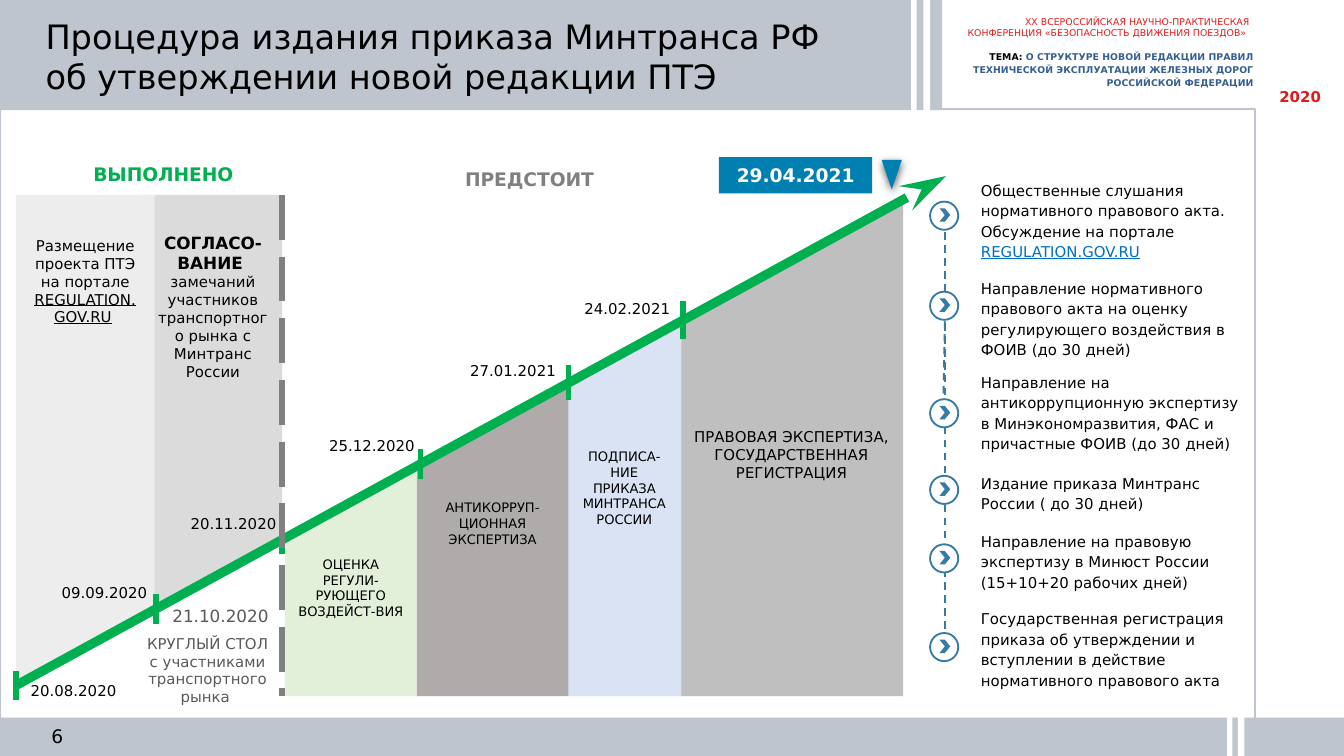
from lxml.etree import SubElement
from pptx import Presentation
from pptx.dml.color import RGBColor
from pptx.enum.dml import MSO_LINE
from pptx.enum.shapes import MSO_CONNECTOR, MSO_SHAPE
from pptx.enum.text import MSO_ANCHOR, PP_ALIGN
from pptx.oxml.ns import qn
from pptx.util import Inches, Pt

FONT = "DejaVu Sans"
HUE = {
    "black": "000000", "white": "FFFFFF", "frame": "BFC5CE", "red": "E21A1A",
    "navy": "365F91", "link": "0070C0", "steel": "377AA3", "blue": "007FB1",
    "green": "00B050", "gray": "808080", "dark": "595959", "mist": "EDEDED",
    "cloud": "DBDBDB", "lime": "E2F0D9", "taupe": "AFABAB", "sky": "DAE3F3",
    "stone": "BFBFBF",
}
LEFT, RIGHT, MID = PP_ALIGN.LEFT, PP_ALIGN.RIGHT, PP_ALIGN.CENTER

# Content: a paragraph is a string or a list of (text, style) runs
TITLE = "Процедура издания приказа Минтранса РФ об утверждении новой редакции ПТЭ"
EVENT = "XX ВСЕРОССИЙСКАЯ НАУЧНО-ПРАКТИЧЕСКАЯ КОНФЕРЕНЦИЯ «БЕЗОПАСНОСТЬ ДВИЖЕНИЯ ПОЕЗДОВ» "
THEME = [("ТЕМА: ", {"bold": True}),
         ("О СТРУКТУРЕ НОВОЙ РЕДАКЦИИ ПРАВИЛ ТЕХНИЧЕСКОЙ ЭКСПЛУАТАЦИИ ЖЕЛЕЗНЫХ ДОРОГ "
          "РОССИЙСКОЙ ФЕДЕРАЦИИ", {"bold": True, "hue": "navy"})]

# Finished stages, above the arrow: left, right, fill, text top, paragraphs
DONE = [
    (1.07, 2.1, "cloud", 1.73, [
        [("СОГЛАСО-ВАНИЕ ", {"bold": True, "size": 9})],
        "замечаний участников транспортного рынка с Минтранс России"]),
    (0.12, 1.15, "mist", 1.76, [
        [("Размещение проекта ПТЭ на портале ", {}), ("REGULATION.", {"under": True})],
        [("GOV.RU", {"under": True}), (" ", {})]]),
]
# Stages to come, below the arrow: the same and text size
AHEAD = [
    (5.06, 6.72, "stone", 3.18, ["ПРАВОВАЯ ЭКСПЕРТИЗА,", "ГОСУДАРСТВЕННАЯ РЕГИСТРАЦИЯ"], 8),
    (4.22, 5.07, "sky", 3.34, ["ПОДПИСА-НИЕ ПРИКАЗА МИНТРАНСА РОССИИ"], 7),
    (3.1, 4.23, "taupe", 3.72, ["АНТИКОРРУП-ЦИОННАЯ ЭКСПЕРТИЗА"], 7),
    (2.12, 3.1, "lime", 4.14, ["ОЦЕНКА РЕГУЛИ-РУЮЩЕГО ВОЗДЕЙСТ-ВИЯ"], 7),
]
# Milestones: tick x, half height, date, label left and top
DATES = [
    (0.12, 0.11, "20.08.2020", 0.13, 5.02),
    (1.16, 0.11, "09.09.2020", 0.36, 4.29),
    (2.1, 0.11, "20.11.2020", 1.32, 3.78),
    (3.13, 0.11, "25.12.2020", 2.35, 3.2),
    (4.23, 0.13, "27.01.2021", 3.4, 2.64),
    (5.08, 0.14, "24.02.2021", 4.25, 2.18),
]
ROUND = ["КРУГЛЫЙ СТОЛ", "с участниками", "транспортного", "рынка "]
# Steps: text top, width, height, circle top, paragraph
STEPS = [
    (1.28, 2.1, 0.67, 1.5, [
        ("Общественные слушания нормативного правового акта. Обсуждение на портале ", {}),
        ("REGULATION.GOV.RU", {"hue": "link", "under": True})]),
    (2.01, 2.1, 0.7, 2.17, "Направление нормативного правового акта на оценку "
     "регулирующего воздействия в ФОИВ (до 30 дней)"),
    (2.71, 2.46, 0.72, 2.97, "Направление на \nантикоррупционную экспертизу \n"
     "в Минэкономразвития, ФАС и причастные ФОИВ (до 30 дней)"),
    (3.46, 2.15, 0.41, 3.54, "Издание приказа Минтранс России ( до 30 дней)"),
    (3.89, 2.1, 0.52, 4.05, "Направление на правовую экспертизу в Минюст России "
     "(15+10+20 рабочих дней)"),
    (4.47, 2.1, 0.67, 4.71, "Государственная регистрация приказа об утверждении и "
     "вступлении в действие нормативного правового акта"),
]

START, END = (0.12, 5.1), (7.04, 1.31)
TOP, BASE = 1.45, 5.18

deck = Presentation()
deck.slide_width = Inches(10)
deck.slide_height = deck.slide_width * 9 // 16
slide = deck.slides.add_slide(deck.slide_layouts[6])
shapes = slide.shapes


def color(name):
    return RGBColor.from_string(HUE[name])


def rise(x):
    """Height of the arrow at x."""
    return START[1] + (x - START[0]) * (END[1] - START[1]) / (END[0] - START[0])


def write(shape, paras, size, hue="black", align=LEFT, bold=False, gap=None):
    frame = shape.text_frame
    frame.word_wrap = True
    for i, item in enumerate(paras):
        para = frame.paragraphs[0] if i == 0 else frame.add_paragraph()
        para.alignment = align
        if gap:
            para.line_spacing = gap
        styles = []
        if isinstance(item, str):
            para.text = item
        else:
            for text, style in item:
                para.add_run().text = text
                styles.append(style)
        for j, run in enumerate(para.runs):
            style = styles[j] if styles else {}
            font = run.font
            font.name, font.size = FONT, Pt(style.get("size", size))
            font.bold = style.get("bold", bold)
            font.underline = style.get("under", False)
            font.color.rgb = color(style.get("hue", hue))
    return frame


def label(box, paras, size, **style):
    return write(shapes.add_textbox(*map(Inches, box)), paras, size, **style)


def paint(shape, fill, line=None):
    shape.shadow.inherit = False
    if fill:
        shape.fill.solid()
        shape.fill.fore_color.rgb = color(fill)
    else:
        shape.fill.background()
    if line:
        shape.line.color.rgb, shape.line.width = color(line), Pt(1)
    else:
        shape.line.fill.background()
    return shape


def block(box, fill, line=None, kind=MSO_SHAPE.RECTANGLE):
    return paint(shapes.add_shape(kind, *map(Inches, box)), fill, line)


def shade(shape, hue, alpha, blur, dist):
    fx = shape._element.spPr.find(qn("a:effectLst"))
    cast = SubElement(fx, qn("a:outerShdw"), blurRad=str(Pt(blur)), dist=str(Pt(dist)),
                      dir="5400000", rotWithShape="0")
    tint = SubElement(cast, qn("a:srgbClr"), val=HUE[hue])
    SubElement(tint, qn("a:alpha"), val=str(alpha * 1000))


def rule(start, end, hue, width, dash=None):
    line = shapes.add_connector(MSO_CONNECTOR.STRAIGHT, *map(Inches, start + end))
    line.line.color.rgb, line.line.width = color(hue), Pt(width)
    if dash:
        line.line.dash_style = dash
    SubElement(line._element.spPr, qn("a:effectLst"))
    return line


def stage(left, right, flat, fill, top, paras, size):
    """Column between a flat edge and the arrow."""
    pts = [(left, flat), (right, flat), (right, rise(right)), (left, rise(left))]
    pts = [(Inches(x), Inches(y)) for x, y in pts]
    pen = shapes.build_freeform(*pts[0])
    pen.add_line_segments(pts[1:], close=True)
    frame = write(paint(pen.convert_to_shape(), fill), paras, size, align=MID)
    frame.vertical_anchor = MSO_ANCHOR.TOP
    frame.margin_top = Inches(top - min(flat, rise(right)))


# Page frame
block((0, 0.81, 9.34, 4.8), None, "frame")
block((0, 0, 7.01, 0.82), "frame")
shade(block((0, 5.34, 10, 0.29), "frame"), "gray", 35, 3.1, 1.8)
for x, y, w, h in [(6.87, -0.01, 0.05, 0.84), (6.78, -0.01, 0.04, 0.84),
                   (9.21, 5.3, 0.05, 0.35), (9.13, 5.3, 0.04, 0.35)]:
    block((x, y, w, h), "white")

# Header and page number
label((0.24, 0.07, 6.32, 0.71), [TITLE], 18)
label((7.02, 0.07, 2.38, 0.27), [EVENT], 5, hue="red", align=RIGHT)
label((6.97, 0.32, 2.46, 0.39), [THEME], 5, align=RIGHT, gap=1.15)
label((9.42, 0.6, 0.69, 0.24), ["2020"], 8, hue="red", bold=True)
page = label((0.22, 5.39, 0.25, 0.17), ["6"], 10, align=RIGHT)
page.margin_left = page.margin_right = page.margin_top = page.margin_bottom = 0
page.vertical_anchor = MSO_ANCHOR.MIDDLE

# Steps on the right
rule((7.03, 1.73), (7.03, 4.71), "steel", 1, MSO_LINE.DASH)
rule((7.03, 2.39), (7.02, 2.97), "steel", 1, MSO_LINE.DASH)
for top, wide, high, ring, text in STEPS:
    label((7.2, top, wide, high), [text], 8, gap=Pt(11))
    block((6.92, ring, 0.21, 0.21), "white", "steel", MSO_SHAPE.OVAL)
    block((6.99, ring + 0.05, 0.08, 0.1), "steel", kind=MSO_SHAPE.CHEVRON)

# Stages along the arrow
for left, right, fill, top, paras, size in AHEAD:
    stage(left, right, BASE, fill, top, paras, size)
for left, right, fill, top, paras in DONE:
    stage(left, right, TOP, fill, top, paras, 8)

# Milestones
for x, half, date, left, top in DATES:
    rule((x, rise(x) + half), (x, rise(x) - half), "green", 3)
    label((left, top, 1.13, 0.22), [date], 8)
label((1.05, 4.46, 1.18, 0.25), ["21.10.2020"], 9, hue="dark", align=MID)
label((0.9, 4.67, 1.29, 0.64), ROUND, 8, hue="dark", align=MID)

# Arrow and the line between done and ahead
arrow = rule(START, END, "green", 5)
SubElement(arrow.line._get_or_add_ln(), qn("a:tailEnd"), type="stealth", len="lg")
rule((2.1, TOP), (2.1, BASE), "gray", 3, MSO_LINE.LONG_DASH)
label((0.45, 1.16, 1.53, 0.27), ["ВЫПОЛНЕНО"], 10, hue="green", align=MID, bold=True)
label((3.31, 1.2, 1.26, 0.25), ["ПРЕДСТОИТ"], 10, hue="gray", align=MID, bold=True)

# Final date
write(block((5.35, 1.17, 1.14, 0.27), "blue"), ["29.04.2021"], 10,
      hue="white", align=MID, bold=True)
mark = block((6.56, 1.19, 0.15, 0.22), "blue", kind=MSO_SHAPE.ISOSCELES_TRIANGLE)
mark.rotation = 180
shade(mark, "black", 63, 4.5, 1.5)

deck.save("out.pptx")
